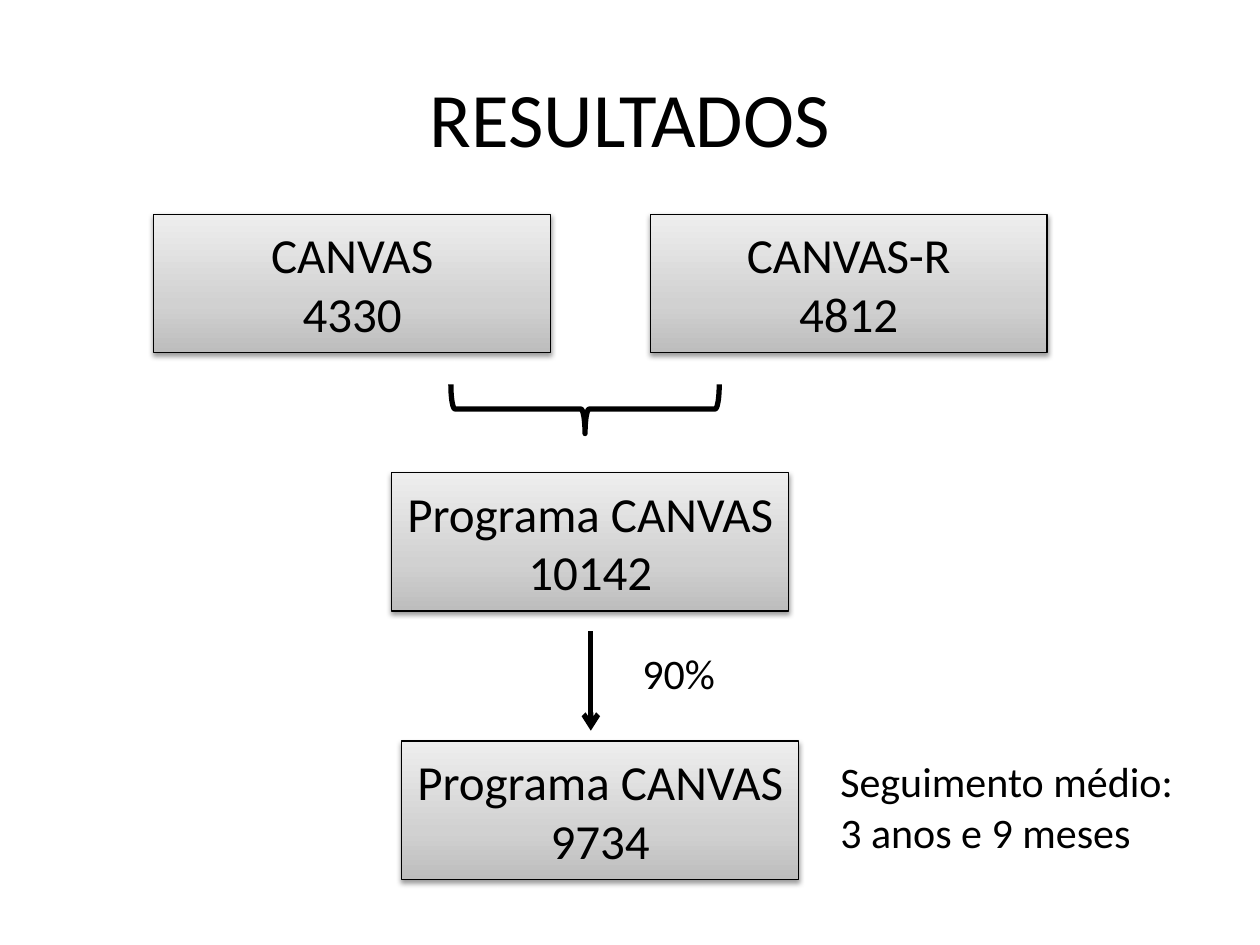
from lxml import etree
from pptx import Presentation
from pptx.dml.color import RGBColor
from pptx.enum.shapes import MSO_CONNECTOR, MSO_SHAPE
from pptx.enum.text import MSO_ANCHOR, MSO_AUTO_SIZE, PP_ALIGN
from pptx.oxml.ns import qn
from pptx.util import Cm, Pt

RECTANGLE, LEFT_BRACE = MSO_SHAPE.RECTANGLE, MSO_SHAPE.LEFT_BRACE
STRAIGHT = MSO_CONNECTOR.STRAIGHT
LEFT, CENTER = PP_ALIGN.LEFT, PP_ALIGN.CENTER
TOP, MIDDLE = MSO_ANCHOR.TOP, MSO_ANCHOR.MIDDLE
FIT_SHAPE = MSO_AUTO_SIZE.SHAPE_TO_FIT_TEXT

FONT = "Calibri"
BLACK = "000000"
BOX_GRADIENT = [(0, "BDBDBD"), (35, "D1D1D1"), (100, "EEEEEE")]
BOX_WIDTH, BOX_HEIGHT = 8, 2.79
BOXES = [
    (3.1, 4.32, ["CANVAS", "4330"]),
    (13.11, 4.32, ["CANVAS-R", "4812"]),
    (7.9, 9.53, ["Programa CANVAS", "10142"]),
    (8.1, 14.94, ["Programa CANVAS", "9734"]),
]


def color(value):
    """Turn a hex string into a colour."""
    return RGBColor.from_string(value)


def add_element(parent, tag, **attributes):
    """Append a drawing element with the given attributes."""
    values = {name: str(value) for name, value in attributes.items()}
    return etree.SubElement(parent, qn(tag), values)


def set_line(shape, width):
    """Give a shape or connector a black line."""
    shape.line.color.rgb = color(BLACK)
    shape.line.width = Pt(width)


def set_gradient(shape, stops):
    """Fill a shape that already has a line with a gradient from the bottom up."""
    properties = shape.element.spPr
    gradient = add_element(properties, "a:gradFill", rotWithShape=1)
    stop_list = add_element(gradient, "a:gsLst")
    for position, value in stops:
        stop = add_element(stop_list, "a:gs", pos=position * 1000)
        add_element(stop, "a:srgbClr", val=value)
    add_element(gradient, "a:lin", ang=270 * 60000, scaled=0)
    properties.find(qn("a:ln")).addprevious(gradient)


def set_shadow(shape):
    """Give a shape a soft shadow straight below it."""
    shape.shadow.inherit = False
    effects = shape.element.spPr.find(qn("a:effectLst"))
    shadow = add_element(effects, "a:outerShdw", blurRad=Pt(3.1), dist=Pt(1.6),
                         dir=90 * 60000, rotWithShape=0)
    shadow_color = add_element(shadow, "a:srgbClr", val=BLACK)
    add_element(shadow_color, "a:alpha", val=38000)


def write_text(shape, lines, size, alignment, anchor):
    """Write one paragraph for each line of text."""
    frame = shape.text_frame
    frame.word_wrap = True
    frame.vertical_anchor = anchor
    for index, line in enumerate(lines):
        paragraph = frame.add_paragraph() if index else frame.paragraphs[0]
        paragraph.alignment = alignment
        run = paragraph.add_run()
        run.text = line
        run.font.name = FONT
        run.font.size = Pt(size)
        run.font.color.rgb = color(BLACK)


def add_text(slide, left, top, width, height, lines, size=24,
             alignment=LEFT, anchor=TOP):
    """Add a text box and return it."""
    box = slide.shapes.add_textbox(Cm(left), Cm(top), Cm(width), Cm(height))
    write_text(box, lines, size, alignment, anchor)
    return box


def add_box(slide, left, top, lines):
    """Add a grey study box with its name and patient count."""
    box = slide.shapes.add_shape(RECTANGLE, Cm(left), Cm(top),
                                 Cm(BOX_WIDTH), Cm(BOX_HEIGHT))
    set_line(box, 0.75)
    set_gradient(box, BOX_GRADIENT)
    set_shadow(box)
    write_text(box, lines, 28, CENTER, MIDDLE)


def add_brace(slide, left, top, width, height):
    """Add a brace turned to point downwards."""
    brace = slide.shapes.add_shape(LEFT_BRACE, Cm(left), Cm(top),
                                   Cm(width), Cm(height))
    brace.rotation = 270
    brace.fill.background()
    set_line(brace, 3)
    brace.shadow.inherit = False


def add_down_arrow(slide, left, top, bottom):
    """Add a vertical line with an open arrowhead at the bottom."""
    arrow = slide.shapes.add_connector(STRAIGHT, Cm(left), Cm(top),
                                       Cm(left), Cm(bottom))
    set_line(arrow, 3)
    properties = arrow.element.spPr
    add_element(properties.find(qn("a:ln")), "a:tailEnd", type="arrow")
    add_element(properties, "a:effectLst")


def main():
    """Build the results slide."""
    presentation = Presentation()
    presentation.slide_width, presentation.slide_height = Cm(25.4), Cm(19.05)
    slide = presentation.slides.add_slide(presentation.slide_layouts[6])
    add_text(slide, 1.27, 0.76, 22.86, 3.18, ["RESULTADOS"], 44, CENTER, MIDDLE)
    for left, top, lines in BOXES:
        add_box(slide, left, top, lines)
    add_brace(slide, 11.3, 5.54, 0.99, 5.41)
    add_down_arrow(slide, 11.91, 12.73, 14.73)
    rate = add_text(slide, 12.7, 12.93, 2.21, 1.27, ["90%"])
    follow_up = add_text(slide, 16.69, 15.11, 7.9, 2.31,
                         ["Seguimento médio:", "3 anos e 9 meses"])
    for label in (rate, follow_up):
        label.text_frame.auto_size = FIT_SHAPE
    presentation.save("out.pptx")


if __name__ == "__main__":
    main()
